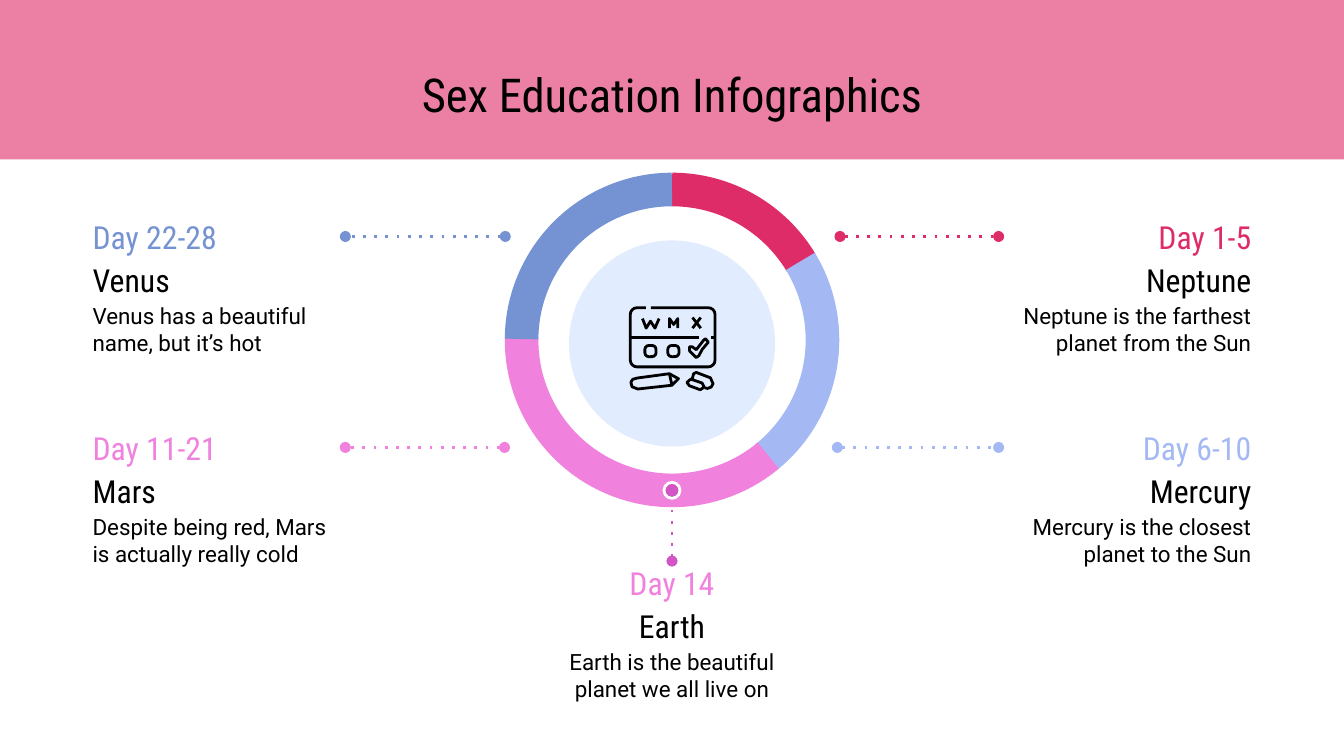
import dataclasses
import math

import lxml.etree
import pptx
import pptx.dml.color
import pptx.enum.dml
import pptx.enum.shapes
import pptx.enum.text
import pptx.oxml.ns
import pptx.util

Pt = pptx.util.Pt
SHAPE = pptx.enum.shapes.MSO_SHAPE
ALIGN = pptx.enum.text.PP_ALIGN
ANCHOR = pptx.enum.text.MSO_ANCHOR


@dataclasses.dataclass(frozen=True)
class Theme:
    heading: str = "Roboto Condensed"
    body: str = "Roboto"
    title_size: float = 25
    label_size: float = 17
    body_size: float = 12
    black: str = "000000"
    white: str = "FFFFFF"
    band: str = "EB80A4"
    disc: str = "E1EDFF"
    blue: str = "7592D3"
    red: str = "DD2C67"
    pink: str = "F081DD"
    sky: str = "A4B9F4"
    purple: str = "D354C4"


T = Theme()
TOP, LEFT, RIGHT = 0, 1, 3
LABEL_W, LABEL_H, BODY_H = 142.5, 23, 30

PHASES = [
    ("Day 22-28", "Venus", "Venus has a beautiful name, but it’s hot",
     T.blue, T.blue, (42.5, 115.2), ALIGN.LEFT, RIGHT, (270.7, 126.7)),
    ("Day 1-5", "Neptune", "Neptune is the farthest planet from the Sun",
     T.red, T.red, (535, 115.2), ALIGN.RIGHT, LEFT, (450, 126.7)),
    ("Day 11-21", "Mars", "Despite being red, Mars is actually really cold",
     T.pink, T.pink, (42.5, 228.2), ALIGN.LEFT, RIGHT, (270.3, 239.7)),
    ("Day 6-10", "Mercury", "Mercury is the closest planet to the Sun",
     T.sky, T.sky, (535, 228.2), ALIGN.RIGHT, LEFT, (448.6, 239.7)),
    ("Day 14", "Earth", "Earth is the beautiful planet we all live on",
     T.pink, T.purple, (288.75, 300.6), ALIGN.CENTER, TOP, (360, 267)),
]

ARCS = [
    (T.red, 162, 197.5),
    (T.sky, 197.13, 30.61),
    (T.pink, 30.14, 108.64),
    (T.blue, 108.21, 162),
]

OPEN_STROKES = [
    [(0.7, 16.6), (37.4, 16.6)],
    [(44, 16.6), (46, 16.6)],
    [(7.2, 6.5), (9.2, 11.6), (11.5, 7.9), (13.9, 11.6), (16.1, 6.5)],
    [(21.6, 11.6), (21.6, 6.5), (23.9, 9.7), (26.1, 6.5), (26.1, 11.6)],
    [(34, 5.9), (38.4, 11.6)],
    [(38.4, 5.9), (34, 11.6)],
    [(21.6, 36), (23, 42.2)],
    [(33.8, 38.9), (34.6, 36), (36, 35.3), (43.6, 38.2), (45, 41.4),
     (44, 43.2), (42.1, 43.9), (40.6, 43.6)],
]
CLOSED_STROKES = [
    [(41, 17.3), (42.4, 19.2), (39.2, 23), (37.4, 26.4), (36, 27.4),
     (32.4, 23.8), (32.4, 21.6), (33.8, 21.6), (36, 23.2), (40, 18)],
    [(4.5, 38.3), (21.6, 36), (26.5, 38.7), (23, 42.2), (4.7, 44.2),
     (1.6, 43), (1, 40.6), (2, 39)],
    [(33.1, 38.9), (39.2, 41), (40.3, 43.2), (38.2, 44.6), (32.4, 42.5),
     (31, 40.7)],
]


def rgb(color):
    return pptx.dml.color.RGBColor.from_string(color)


def paint(sp, fill=None, line=None, width=1.5):
    sp.shadow.inherit = False
    if fill:
        sp.fill.solid()
        sp.fill.fore_color.rgb = rgb(fill)
    else:
        sp.fill.background()
    if line:
        sp.line.color.rgb = rgb(line)
        sp.line.width = Pt(width)
    else:
        sp.line.fill.background()


def add_shape(s, kind, box, **style):
    sp = s.shapes.add_shape(kind, *map(Pt, box))
    paint(sp, **style)
    return sp


def write(sp, text, font, size, color, align, anchor):
    tf = sp.text_frame
    tf.text = text
    tf.word_wrap = True
    tf.auto_size = pptx.enum.text.MSO_AUTO_SIZE.NONE
    tf.vertical_anchor = anchor
    tf.margin_left = tf.margin_right = Pt(7.2)
    tf.margin_top = tf.margin_bottom = Pt(7.2)
    p = tf.paragraphs[0]
    p.alignment = align
    f = p.runs[0].font
    f.name, f.size, f.color.rgb = font, Pt(size), rgb(color)


def add_header(s, box):
    x, y, w, h = box
    band = add_shape(s, SHAPE.RECTANGLE, box, fill=T.band)
    title = s.shapes.title
    title.element.addprevious(band.element)
    title.left, title.top = Pt(x + 42.5), Pt(y + 28)
    title.width, title.height = Pt(w - 85), Pt(45.4)
    write(title, "Sex Education Infographics", T.heading, T.title_size,
          T.black, ALIGN.CENTER, ANCHOR.TOP)


def add_leader(s, start, target, site, color):
    c = s.shapes.add_connector(pptx.enum.shapes.MSO_CONNECTOR.STRAIGHT,
                               *map(Pt, start + start))
    c.end_connect(target, site)
    c.line.color.rgb = rgb(color)
    c.line.width = Pt(1.5)
    c.line.dash_style = pptx.enum.dml.MSO_LINE.ROUND_DOT
    qn = pptx.oxml.ns.qn
    ln = c.line._get_or_add_ln()
    ln.find(qn("a:prstDash")).set("val", "dot")
    for end in ("a:headEnd", "a:tailEnd")[site == TOP:]:
        lxml.etree.SubElement(ln, qn(end), type="oval")
    lxml.etree.SubElement(c.element.spPr, qn("a:effectLst"))


def add_phase(s, origin, phase):
    day, planet, note, color, leader, _, align, site, start = phase
    x, y = origin
    rows = [
        (day, T.heading, T.label_size, color, LABEL_H),
        (planet, T.heading, T.label_size, T.black, LABEL_H),
        (note, T.body, T.body_size, T.black, BODY_H),
    ]
    boxes = []
    for text, font, size, ink, h in rows:
        sp = s.shapes.add_textbox(Pt(x), Pt(y), Pt(LABEL_W), Pt(h))
        write(sp, text, font, size, ink, align, ANCHOR.MIDDLE)
        boxes.append(sp)
        y += h
    add_leader(s, start, boxes[0], site, leader)


def add_ring(s, box):
    x, y, w, h = box
    for color, begin, end in ARCS:
        sp = add_shape(s, SHAPE.ARC, box, line=color, width=18)
        sp.adjustments[0], sp.adjustments[1] = begin, end
    add_shape(s, SHAPE.OVAL, (x + w / 2 - 4.3, y + h - 4.3, 8.6, 8.6),
              fill=T.purple, line=T.white)


def add_stroke(s, origin, points, close):
    pts = [(Pt(origin[0] + px), Pt(origin[1] + py)) for px, py in points]
    fb = s.shapes.build_freeform(*pts[0])
    fb.add_line_segments(pts[1:], close=close)
    paint(fb.convert_to_shape(), line=T.black)


def calendar_frame(w, h, r, inset):
    points = [(inset + 11, inset)]
    corners = [(w - r, r, -90), (w - r, h - r, 0), (r, h - r, 90), (r, r, 180)]
    for cx, cy, first in corners:
        for step in range(5):
            a = math.radians(first + 22.5 * step)
            points.append((inset + cx + r * math.cos(a),
                           inset + cy + r * math.sin(a)))
    return points + [(inset + 8.3, inset)]


def add_calendar_icon(s, origin):
    x, y = origin
    for points in [calendar_frame(45.4, 31.7, 3.6, 0.7)] + OPEN_STROKES:
        add_stroke(s, origin, points, False)
    for points in CLOSED_STROKES:
        add_stroke(s, origin, points, True)
    for dx in (8.5, 20.8):
        sp = add_shape(s, SHAPE.ROUNDED_RECTANGLE, (x + dx, y + 20.9, 6, 6),
                       line=T.black)
        sp.adjustments[0] = 0.35


def main():
    prs = pptx.Presentation()
    prs.slide_width, prs.slide_height = Pt(720), Pt(405)
    s = prs.slides.add_slide(prs.slide_layouts[5])
    add_header(s, (0, 0, 720, 85.5))
    add_shape(s, SHAPE.OVAL, (304.8, 128.8, 110.4, 110.4), fill=T.disc)
    for phase in PHASES:
        add_phase(s, phase[5], phase)
    add_ring(s, (279.4, 101.5, 161.2, 161.2))
    add_calendar_icon(s, (337, 164.2))
    prs.save("out.pptx")


if __name__ == "__main__":
    main()
